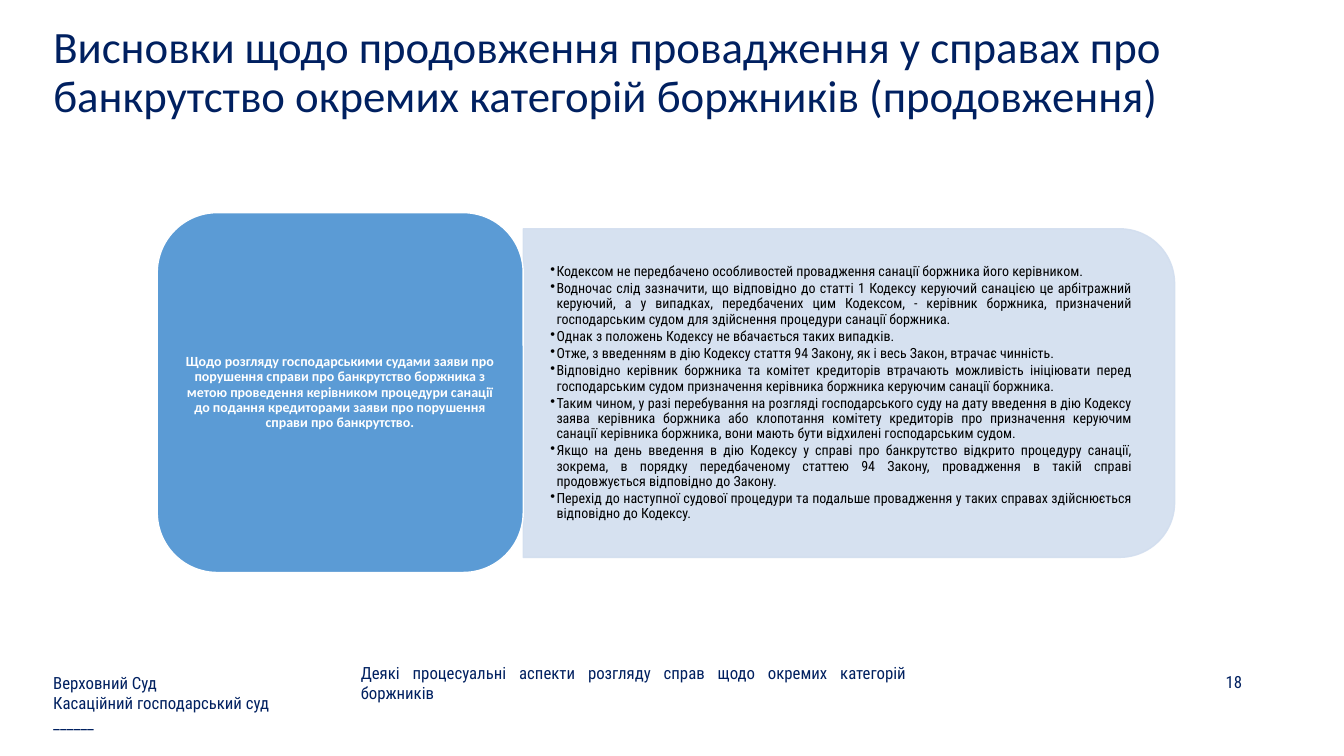
from lxml import etree
from pptx import Presentation
from pptx import util as u
from pptx.dml.color import RGBColor
from pptx.enum import shapes, text
from pptx.oxml.ns import qn

PX = 9144  # 100 px to the inch
NAVY, BLACK, WHITE = "002060", "000000", "FFFFFF"
BLUE, PALE = "5B9BD5", "D2DEEF"
HEADING, BODY = "Calibri", "Roboto Condensed"
ALIGN = text.PP_ALIGN

TITLE = ("Висновки щодо продовження провадження у справах про банкрутство "
         "окремих категорій боржників (продовження)")
COURT = ["Верховний Суд", "Касаційний господарський суд", "______"]
TOPIC = "Деякі процесуальні аспекти розгляду справ щодо окремих категорій боржників"
QUESTION = ("Щодо розгляду господарськими судами заяви про порушення справи про "
            "банкрутство боржника з метою проведення керівником процедури санації "
            "до подання кредиторами заяви про порушення справи про банкрутство.")
FINDINGS = [
    "Кодексом не передбачено особливостей провадження санації боржника його керівником.",
    "Водночас слід зазначити, що відповідно до статті 1 Кодексу керуючий санацією це "
    "арбітражний керуючий, а у випадках, передбачених цим Кодексом, - керівник боржника, "
    "призначений господарським судом для здійснення процедури санації боржника.",
    "Однак з положень Кодексу не вбачається таких випадків.",
    "Отже, з введенням в дію Кодексу стаття 94 Закону, як і весь Закон, втрачає чинність.",
    "Відповідно керівник боржника та комітет кредиторів втрачають можливість ініціювати "
    "перед господарським судом призначення керівника боржника керуючим санації боржника.",
    "Таким чином, у разі перебування на розгляді господарського суду на дату введення в дію "
    "Кодексу заява керівника боржника або клопотання комітету кредиторів про призначення "
    "керуючим санації керівника боржника, вони мають бути відхилені господарським судом.",
    "Якщо на день введення в дію Кодексу у справі про банкрутство відкрито процедуру санації, "
    "зокрема, в порядку передбаченому статтею 94 Закону, провадження в такій справі "
    "продовжується відповідно до Закону.",
    "Перехід до наступної судової процедури та подальше провадження у таких справах "
    "здійснюється відповідно до Кодексу.",
]


def color(value):
    return RGBColor.from_string(value)


class SlideBuilder:
    def __init__(self, page):
        self.page = page

    def shape(self, kind, area, fill, line, rotation=0, opacity=100):
        box = self.page.shapes.add_shape(kind, *(n * PX for n in area))
        box.shadow.inherit = False
        box.rotation = rotation
        box.fill.solid()
        box.fill.fore_color.rgb = color(fill)
        box.line.color.rgb = color(line)
        box.line.width = u.Pt(1)
        if opacity < 100:
            for tint in box._element.spPr.iter(qn("a:srgbClr")):
                etree.SubElement(tint, qn("a:alpha"), val=str(opacity * 1000))

    def text(self, area, lines, size=12, font=BODY, ink=NAVY, bold=False,
             align=ALIGN.LEFT, spacing=1.0, after=0, insets=(10, 5), bullet=False):
        box = self.page.shapes.add_textbox(*(n * PX for n in area))
        frame = box.text_frame
        frame.word_wrap = True
        frame.vertical_anchor = text.MSO_ANCHOR.MIDDLE
        frame.margin_left = frame.margin_right = insets[0] * PX
        frame.margin_top = frame.margin_bottom = insets[1] * PX
        frame.text = "\n".join(lines)
        for para in frame.paragraphs:
            para.alignment = align
            para.line_spacing = spacing
            para.space_after = u.Pt(after)
            para.font.size = u.Pt(size)
            para.font.name = font
            para.font.bold = bold
            para.font.color.rgb = color(ink)
            if bullet:
                self.bullet(para)

    def bullet(self, para, indent=6):
        props = para._p.get_or_add_pPr()
        props.set("marL", str(indent * PX))
        props.set("indent", str(-indent * PX))
        mark = etree.Element(qn("a:buChar"), char="•")
        props.find(qn("a:defRPr")).addprevious(mark)


def main():
    deck = Presentation()
    deck.slide_width, deck.slide_height = 1333 * PX, 750 * PX
    slide = SlideBuilder(deck.slides.add_slide(deck.slide_layouts[6]))

    # Title
    slide.text((43, 27, 1235, 92), [TITLE], size=32, font=HEADING, spacing=0.9)

    # Footer
    slide.text((942, 660, 300, 33), ["18"], align=ALIGN.RIGHT)
    slide.text((43, 660, 254, 75), COURT)
    slide.text((348, 660, 561, 35), [TOPIC], align=ALIGN.JUSTIFY)

    # Findings panel, turned so that its round corners face right
    slide.shape(shapes.MSO_SHAPE.ROUND_2_SAME_RECTANGLE, (679, 67, 326, 646),
                PALE, PALE, rotation=90, opacity=90)
    slide.text((519, 243, 630, 294), FINDINGS, size=10, ink=BLACK, align=ALIGN.JUSTIFY,
               spacing=0.9, after=1.5, insets=(27, 14), bullet=True)

    # Question card
    slide.shape(shapes.MSO_SHAPE.ROUNDED_RECTANGLE, (156, 211, 363, 357), BLUE, WHITE)
    slide.text((173, 228, 328, 323), [QUESTION], size=10, font=HEADING, ink=WHITE, bold=True,
               align=ALIGN.CENTER, spacing=0.9, after=3.5, insets=(4, 2))

    deck.save("out.pptx")


if __name__ == "__main__":
    main()
